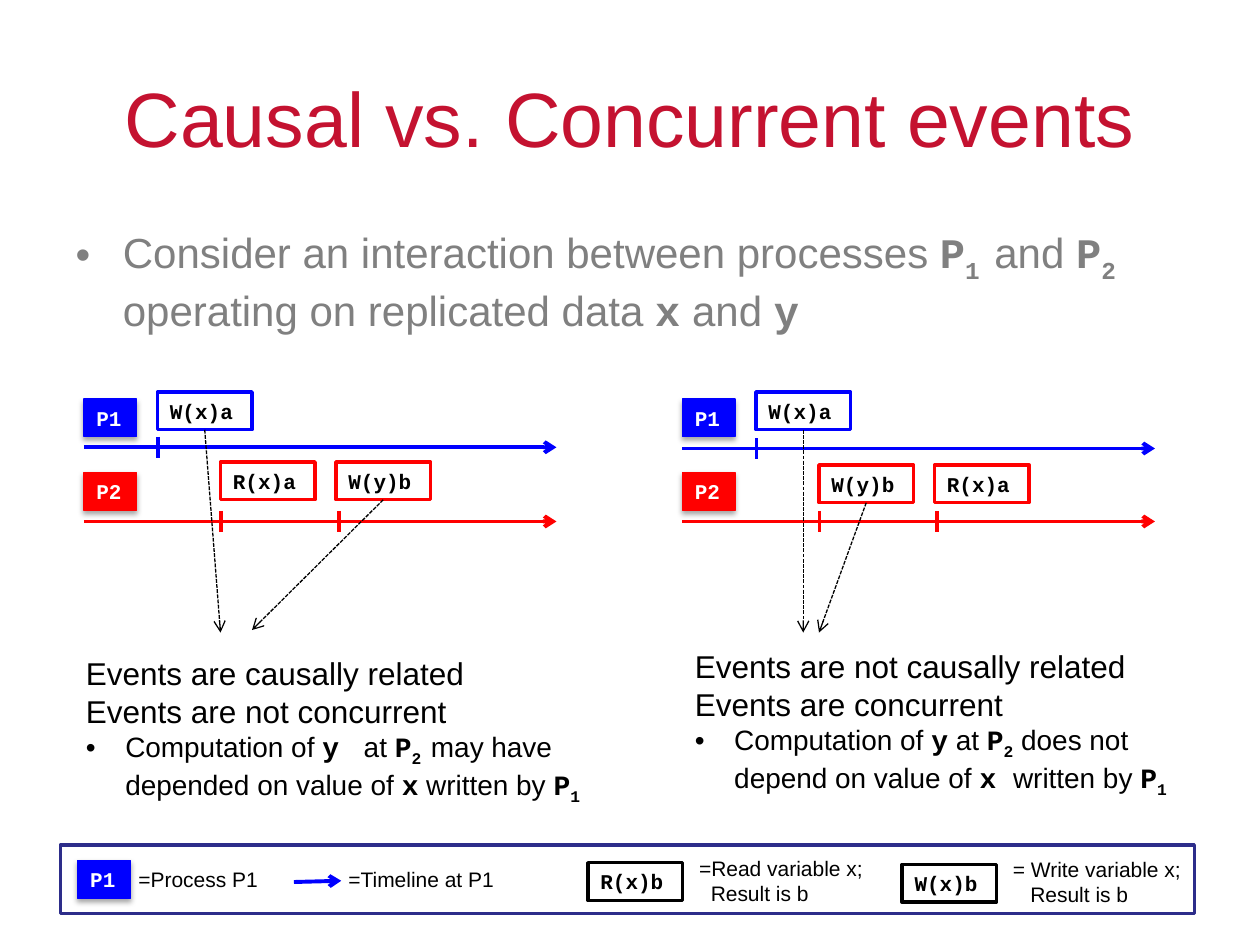
"""Build the slide on causal and concurrent events."""
from lxml.etree import SubElement as Sub
from pptx import Presentation as Deck
from pptx.dml.color import RGBColor as Rgb
from pptx.enum.dml import MSO_LINE as Dash
from pptx.enum.shapes import MSO_CONNECTOR as Link, MSO_SHAPE as Kind
from pptx.enum.text import MSO_ANCHOR as Anchor, PP_ALIGN as Align
from pptx.oxml.ns import qn
from pptx.util import Pt

INK = {"title": "C41230", "grey": "808080", "blue": "0000FF", "red": "FF0000",
       "black": "000000", "white": "FFFFFF", "navy": "2D2D8A"}
SANS, MONO = "Arial", "Courier New"


class Board:
    """Hold the slide and draw styled items on it."""

    def __init__(self, deck):
        self.slide = deck.slides.add_slide(deck.slide_layouts[1])
        self.items = self.slide.shapes

    def font(self, run, size, ink, face=SANS, bold=False):
        font = run.font
        font.size, font.name, font.bold = Pt(size), face, bold
        font.color.rgb = Rgb.from_string(INK[ink])

    def place(self, item, x, y, w, h):
        item.left, item.top, item.width, item.height = map(Pt, (x, y, w, h))

    def bullet(self, para, gap):
        prop = para._p.get_or_add_pPr()
        prop.set("marL", str(Pt(gap)))
        prop.set("indent", str(-Pt(gap)))
        Sub(prop, qn("a:buFont"), typeface=SANS)
        Sub(prop, qn("a:buChar"), char="•")
        para.space_before = Pt(0)

    def rich(self, para, text, size, ink):
        """Write text where |bars| mark code and _ starts a subscript."""
        for spot, part in enumerate(text.split("|")):
            code = spot % 2 == 1
            for low, word in enumerate(part.split("_")):
                if word:
                    run = para.add_run()
                    run.text = word
                    self.font(run, size, ink, MONO if code else SANS, code)
                    if low:
                        run.font._element.set("baseline", "-25000")

    def title(self, text):
        item = self.items.title
        self.place(item, 36, 21.6, 648, 90)
        frame = item.text_frame
        frame.text = text
        frame.vertical_anchor = Anchor.MIDDLE
        para = frame.paragraphs[0]
        para.alignment = Align.CENTER
        self.font(para.runs[0], 44, "title")

    def body(self, text):
        item = self.slide.placeholders[1]
        self.place(item, 36, 126, 648, 356.4)
        para = item.text_frame.paragraphs[0]
        self.bullet(para, 27)
        self.rich(para, text, 24, "grey")

    def rect(self, x, y, w, h, fill, edge, wide):
        item = self.items.add_shape(Kind.RECTANGLE, *map(Pt, (x, y, w, h)))
        item.shadow.inherit = False
        item.fill.solid()
        item.fill.fore_color.rgb = Rgb.from_string(INK[fill])
        item.line.color.rgb = Rgb.from_string(INK[edge])
        item.line.width = Pt(wide)
        return item

    def label(self, item, text, ink):
        item.text_frame.text = text
        para = item.text_frame.paragraphs[0]
        para.alignment = Align.LEFT
        self.font(para.runs[0], 12, ink, MONO, True)

    def badge(self, x, y, text, ink):
        item = self.rect(x, y, 30, 21.6, ink, ink, 0.75)
        self.label(item, text, "white")
        glow = item._element.spPr.find(qn("a:effectLst"))
        cast = Sub(glow, qn("a:outerShdw"), blurRad=str(Pt(3.1)),
                   dist=str(Pt(1.8)), dir="5400000", rotWithShape="0")
        tint = Sub(cast, qn("a:srgbClr"), val=INK["black"])
        Sub(tint, qn("a:alpha"), val="35000")

    def event(self, x, y, text, ink):
        item = self.rect(x, y, 54, 21.6, "white", ink, 2)
        self.label(item, text, "black")
        return item

    def line(self, x1, y1, x2, y2, ink, wide=2.25, head=True, dash=None):
        item = self.items.add_connector(Link.STRAIGHT, *map(Pt, (x1, y1, x2, y2)))
        item.line.color.rgb = Rgb.from_string(INK[ink])
        item.line.width = Pt(wide)
        if dash:
            item.line.dash_style = dash
        prop = item._element.spPr
        if head:
            Sub(prop.get_or_add_ln(), qn("a:tailEnd"), type="arrow")
        Sub(prop, qn("a:effectLst"))
        return item

    def point(self, box, x, y):
        item = self.line(0, 0, x, y, "black", 0.75, dash=Dash.SQUARE_DOT)
        item.begin_connect(box, 2)

    def text(self, x, y, w, h):
        frame = self.items.add_textbox(*map(Pt, (x, y, w, h))).text_frame
        frame.word_wrap = True
        return frame

    def note(self, x, y, w, rows, inset=0):
        frame = self.text(x, y, w, 21.6 if len(rows) == 1 else 36)
        frame.text = "\n".join(rows)
        for spot, para in enumerate(frame.paragraphs):
            self.font(para.runs[0], 12, "black")
            if spot:
                para._p.get_or_add_pPr().set("marL", str(Pt(inset)))

    def claim(self, x, y, w, h, heads, point):
        frame = self.text(x, y, w, h)
        frame.text = "\n".join(heads)
        for para in frame.paragraphs:
            self.font(para.runs[0], 18, "black")
        para = frame.add_paragraph()
        self.bullet(para, 22.5)
        self.rich(para, point, 16, "black")

    def panel(self, x, axis, row, names, ends):
        """Draw two timelines with their events and arrows to the claim."""
        for y, rail, name, ink in ((228, axis, "P1", "blue"), (270, 298, "P2", "red")):
            self.line(x, rail, x + 270, rail, ink)
            self.badge(x, y, name, ink)
        spots = ((42, 224, axis, "blue"), (78, row, 298, "red"), (144, row, 298, "red"))
        for (gap, y, rail, ink), name in zip(spots, names):
            box = self.event(x + gap, y, name, ink)
            tick = x + gap + (1.7 if gap == 144 else 0.3)
            self.line(tick, rail - 6, tick, rail + 6, ink, head=False)
            if name in ends:
                self.point(box, *ends[name])

    def legend(self):
        self.rect(34.5, 483, 648, 39, "white", "navy", 2)
        self.badge(44.5, 491.8, "P1", "blue")
        self.note(72, 491.8, 108, ["=Process P1"])
        self.line(168, 504, 195, 503.3, "blue")
        self.note(192, 491.8, 108, ["=Timeline at P1"])
        self.event(336, 493, "R(x)b", "black")
        self.note(392.4, 485.3, 108, ["=Read variable x;", "Result is b"], 6.7)
        self.event(515.5, 494, "W(x)b", "black")
        self.note(571.7, 486, 112.3, ["= Write variable x;", "Result is b"], 10)


def main():
    deck = Deck()
    deck.slide_width, deck.slide_height = Pt(720), Pt(540)
    board = Board(deck)
    board.title("Causal vs. Concurrent events")
    board.body("Consider an interaction between processes |P_1 |and |P_2 |"
               "operating on replicated data |x| and |y|")
    board.panel(48, 255.6, 264, ("W(x)a", "R(x)a", "W(y)b"),
                {"W(x)a": (126, 361.5), "W(y)b": (144, 360)})
    board.panel(390, 256.3, 265.7, ("W(x)a", "W(y)b", "R(x)a"),
                {"W(x)a": (459, 361.5), "W(y)b": (468, 361.5)})
    board.claim(42, 370, 300, 108.7,
                ("Events are causally related", "Events are not concurrent"),
                "Computation of |y | at |P_2 |may have depended on value of "
                "|x| written by |P_1|")
    board.claim(390, 366, 288, 90,
                ("Events are not causally related", "Events are concurrent"),
                "Computation of |y| at |P_2| does not depend on value of "
                "|x |written by |P_1|")
    board.legend()
    deck.save("out.pptx")


if __name__ == "__main__":
    main()
